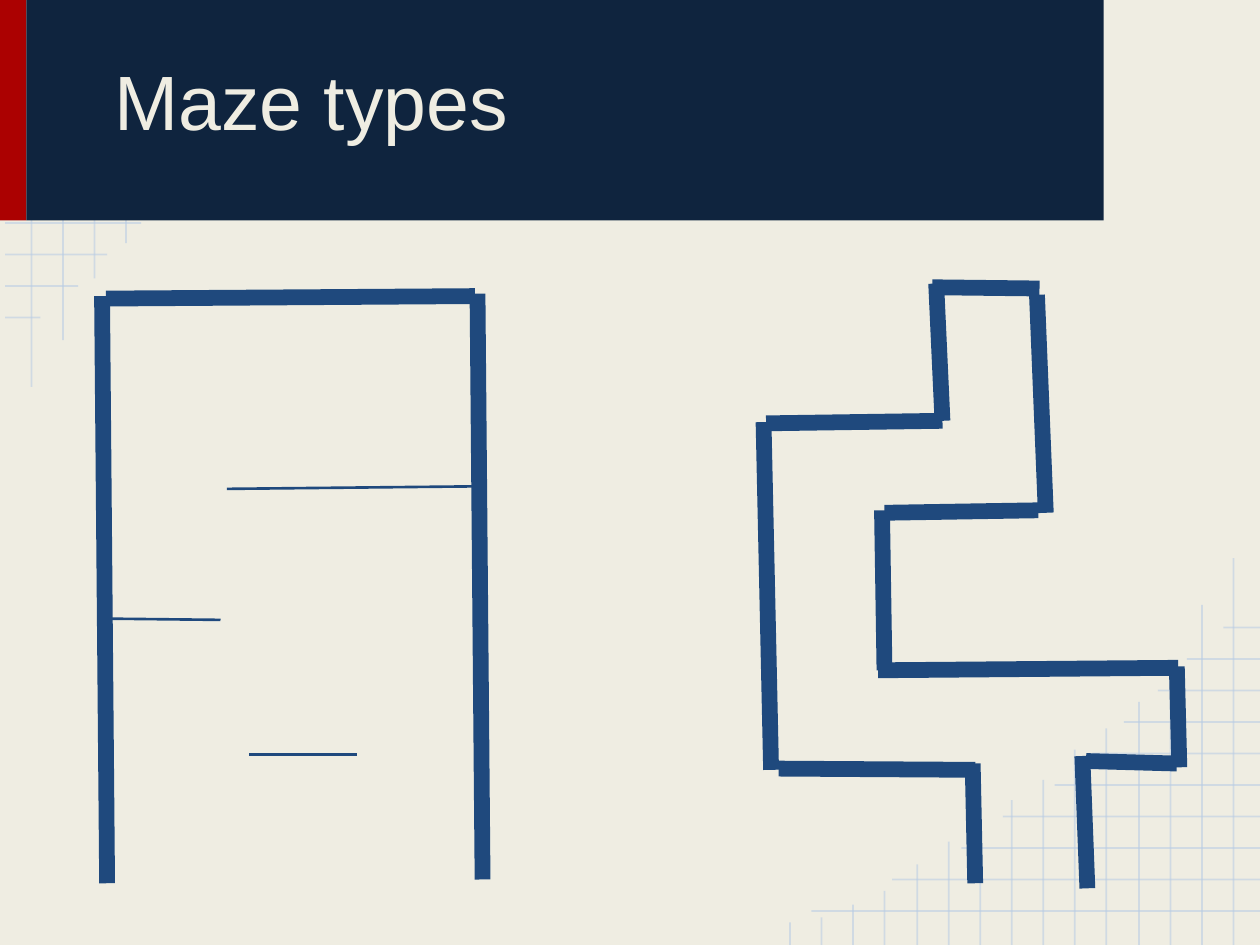
"""Build the "Maze types" slide with two maze outlines."""
from lxml import etree
from pptx import Presentation
from pptx.dml.color import RGBColor
from pptx.enum.shapes import MSO_CONNECTOR, MSO_SHAPE
from pptx.enum.text import MSO_ANCHOR
from pptx.oxml.ns import qn
from pptx.util import Inches, Pt


def rgb(value):
    return RGBColor.from_string(value)


def add_line(x1, y1, x2, y2, color, width, alpha=None):
    ln = s.shapes.add_connector(MSO_CONNECTOR.STRAIGHT, Inches(x1), Inches(y1), Inches(x2), Inches(y2))
    ln.line.color.rgb = rgb(color)
    ln.line.width = Pt(width)
    if alpha:
        clr = ln.line._ln.find(".//" + qn("a:srgbClr"))
        etree.SubElement(clr, qn("a:alpha")).set("val", str(alpha * 1000))
    etree.SubElement(ln._element.spPr, qn("a:effectLst"))


prs = Presentation()
prs.slide_width, prs.slide_height = Inches(10), Inches(7.5)
s = prs.slides.add_slide(prs.slide_layouts[6])
s.background.fill.solid()
s.background.fill.fore_color.rgb = rgb("EFEDE2")

STEP = 0.25
grid = []
for i, right in enumerate([1.12, 0.85, 0.62, 0.32]):
    grid.append((0.04, 1.77 + i * STEP, right, 1.77 + i * STEP))
for i, bottom in enumerate([3.07, 2.7, 2.21, 1.93]):
    grid.append((0.25 + i * STEP, bottom, 0.25 + i * STEP, 0))
for i, left in enumerate([9.71, 9.42, 9.19, 8.92, 8.67, 8.37, 7.96, 7.63, 7.08, 6.44]):
    grid.append((10, 4.98 + i * STEP, left, 4.98 + i * STEP))
tops = [4.43, 4.8, 5.29, 5.57, 5.78, 5.95, 6.19, 6.35, 6.54, 6.68, 6.86, 7.07, 7.18, 7.28, 7.32]
for i, top in enumerate(tops):
    x = round(9.79 - i * 3.52 / 14, 2)
    grid.append((x, top, x, 7.5))
for ends in grid:
    add_line(*ends, "B7CCE4", 1, 54)

for left, width, color in [(0, 0.21, "AB0101"), (0.21, 8.55, "0F243E")]:
    sp = s.shapes.add_shape(MSO_SHAPE.RECTANGLE, Inches(left), Inches(-0.01), Inches(width), Inches(1.76))
    sp.shadow.inherit = False
    sp.fill.solid()
    sp.fill.fore_color.rgb = rgb(color)
    sp.line.fill.background()

tb = s.shapes.add_textbox(Inches(0.5), Inches(0.15), Inches(8), Inches(1.11))
tf = tb.text_frame
tf.word_wrap = True
tf.vertical_anchor = MSO_ANCHOR.BOTTOM
tf.margin_left = tf.margin_right = tf.margin_top = tf.margin_bottom = Inches(0.1)
tf.text = "Maze types"
p = tf.paragraphs[0]
p._p.get_or_add_pPr().set("indent", str(Inches(0.31)))
r = p.runs[0]
r.font.name = "Arial"
r.font.size = Pt(44)
r.font.color.rgb = rgb("EFEDE2")

room_walls = [
    (0.81, 2.35, 0.85, 7.01),
    (3.79, 2.33, 3.83, 6.98),
    (0.84, 2.37, 3.77, 2.35),
]
room_dividers = [
    (0.85, 4.91, 1.75, 4.92),
    (1.8, 3.88, 3.78, 3.86),
    (1.98, 5.99, 2.83, 5.99),
]
corridor_walls = [
    (7.72, 6.06, 7.74, 7.01),
    (8.59, 6, 8.63, 7.05),
    (8.62, 6.04, 9.34, 6.06),
    (9.36, 6.09, 9.34, 5.29),
    (9.35, 5.3, 6.97, 5.32),
    (7.74, 6.11, 6.18, 6.1),
    (6.12, 6.11, 6.06, 3.35),
    (7.02, 5.32, 7, 4.05),
    (7.02, 4.07, 8.24, 4.05),
    (6.08, 3.36, 7.48, 3.34),
    (7.48, 3.34, 7.43, 2.25),
    (8.3, 4.07, 8.23, 2.34),
    (7.4, 2.28, 8.25, 2.29),
]
for walls, width in [(room_walls, 9), (room_dividers, 1.5), (corridor_walls, 9)]:
    for ends in walls:
        add_line(*ends, "1F497D", width)

prs.save("out.pptx")
